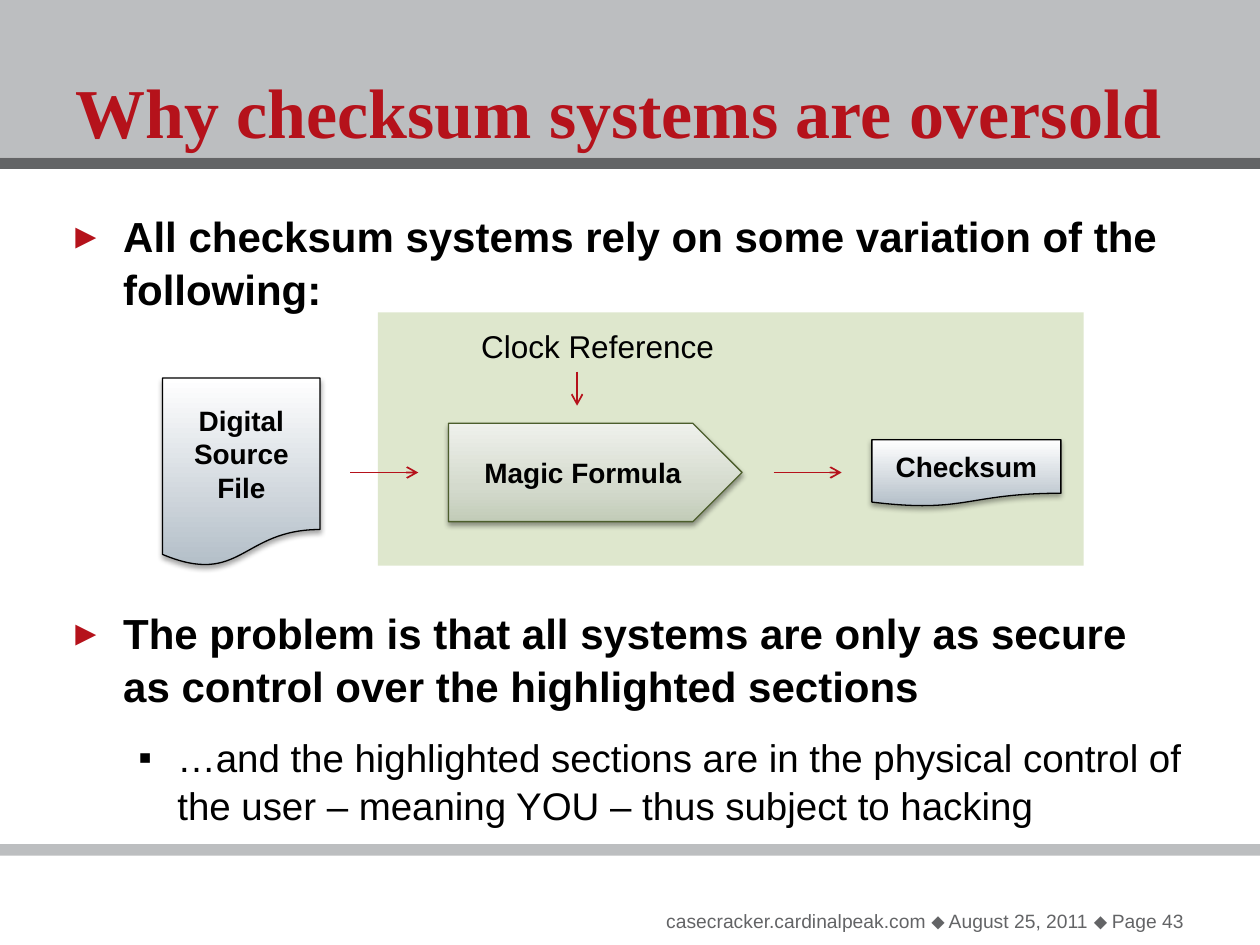
"""Build the slide on why checksum systems are oversold."""
from lxml import etree
from pptx import Presentation
from pptx.dml.color import RGBColor
from pptx.enum.shapes import MSO_CONNECTOR, MSO_SHAPE
from pptx.enum.text import MSO_ANCHOR, PP_ALIGN
from pptx.oxml import parse_xml
from pptx.oxml.ns import nsdecls, qn
from pptx.util import Inches, Pt

RECT = MSO_SHAPE.RECTANGLE
DOCUMENT = MSO_SHAPE.FLOWCHART_DOCUMENT
PENTAGON = MSO_SHAPE.PENTAGON
STRAIGHT = MSO_CONNECTOR.STRAIGHT
MIDDLE, TOP = MSO_ANCHOR.MIDDLE, MSO_ANCHOR.TOP
LEFT, CENTER, RIGHT = PP_ALIGN.LEFT, PP_ALIGN.CENTER, PP_ALIGN.RIGHT

RED = RGBColor(0xB5, 0x12, 0x1B)
BLACK = RGBColor(0, 0, 0)
SILVER = RGBColor(0xBC, 0xBE, 0xC0)
GRAY = RGBColor(0x63, 0x64, 0x66)
HIGHLIGHT = RGBColor(0xDE, 0xE7, 0xCD)
OLIVE = RGBColor(0x4C, 0x5E, 0x2C)
WHITE = RGBColor(0xFF, 0xFF, 0xFF)
STEEL = RGBColor(0xB3, 0xBE, 0xC8)
SAGE = [RGBColor(0xC2, 0xCC, 0xB8), RGBColor(0xD4, 0xDA, 0xCD), RGBColor(0xEF, 0xF1, 0xEC)]

WIDTH, HEIGHT = Inches(10), Inches(7.5)
COLS, ROWS = 100, 75
AXIS = 37.5
STEEL_STOPS = [(0, STEEL), (100, WHITE)]
SAGE_STOPS = list(zip((0, 35, 100), SAGE))


def x(col):
    return round(WIDTH * col / COLS)


def y(row):
    return round(HEIGHT * row / ROWS)


def cell(col, row, cols, rows):
    return x(col), y(row), x(cols), y(rows)


def style_paragraph(p, size, color=BLACK, bold=False, font="Arial", align=LEFT):
    p.alignment = align
    for r in p.runs:
        r.font.name = font
        r.font.size = Pt(size)
        r.font.bold = bold
        r.font.color.rgb = color


def add_panel(s, place, color):
    sp = s.shapes.add_shape(RECT, *place)
    sp.shadow.inherit = False
    sp.fill.solid()
    sp.fill.fore_color.rgb = color
    sp.line.fill.background()


def add_text(s, place, text, anchor=TOP, wrap=True, **style):
    tf = s.shapes.add_textbox(*place).text_frame
    tf.word_wrap = wrap
    tf.vertical_anchor = anchor
    tf.text = text
    style_paragraph(tf.paragraphs[0], **style)


def add_bullet(p, mark, color, margin, hang):
    pPr = p._p.get_or_add_pPr()
    pPr.set("marL", str(Inches(margin)))
    pPr.set("indent", str(-Inches(hang)))
    clr = etree.SubElement(pPr, qn("a:buClr"))
    etree.SubElement(clr, qn("a:srgbClr"), val=str(color))
    etree.SubElement(pPr, qn("a:buFont"), typeface="Arial")
    etree.SubElement(pPr, qn("a:buChar"), char=mark)


def add_points(s, place, points):
    tf = s.shapes.add_textbox(*place).text_frame
    tf.word_wrap = True
    for i, (level, text) in enumerate(points):
        p = tf.paragraphs[0] if i == 0 else tf.add_paragraph()
        p.text = text
        p.level = level
        if level == 0:
            add_bullet(p, "▸", RED, 0.38, 0.38)
            style_paragraph(p, 24, bold=True)
        else:
            add_bullet(p, "▪", BLACK, 0.81, 0.31)
            style_paragraph(p, 22)
        p.line_spacing = 1.05
        if i:
            p.space_before = Pt(12)


def add_step(s, kind, place, text, stops, outline, alpha, distance):
    sp = s.shapes.add_shape(kind, *place)
    sp.line.color.rgb = outline
    sp.line.width = Pt(0.75)
    marks = "".join(
        f'<a:gs pos="{pos * 1000}"><a:srgbClr val="{color}"/></a:gs>' for pos, color in stops)
    spPr = sp._element.spPr
    spPr.find(qn("a:prstGeom")).addnext(parse_xml(
        f'<a:gradFill {nsdecls("a")} rotWithShape="1"><a:gsLst>{marks}</a:gsLst>'
        '<a:lin ang="16200000" scaled="0"/></a:gradFill>'))
    spPr.append(parse_xml(
        f'<a:effectLst {nsdecls("a")}><a:outerShdw blurRad="{Pt(3.1)}" dist="{Pt(distance)}" '
        'dir="5400000" rotWithShape="0"><a:srgbClr val="000000">'
        f'<a:alpha val="{alpha * 1000}"/></a:srgbClr></a:outerShdw></a:effectLst>'))
    tf = sp.text_frame
    tf.word_wrap = True
    tf.vertical_anchor = MIDDLE
    tf.text = text
    style_paragraph(tf.paragraphs[0], 16, bold=True, align=CENTER)


def add_arrow(s, start, end):
    (col1, row1), (col2, row2) = start, end
    line = s.shapes.add_connector(STRAIGHT, x(col1), y(row1), x(col2), y(row2))
    line.line.color.rgb = RED
    line.line.width = Pt(1)
    etree.SubElement(line.line._get_or_add_ln(), qn("a:tailEnd"), type="arrow")
    etree.SubElement(line._element.spPr, qn("a:effectLst"))


def add_frame(s):
    add_panel(s, cell(0, 0, COLS, 12.5), SILVER)
    for row, color in ((12.5, GRAY), (67, SILVER)):
        add_panel(s, cell(0, row, COLS, 0.9), color)
    add_text(s, cell(5, 5, 90, 7.5), "Why checksum systems are oversold", anchor=MIDDLE,
             size=40, color=RED, bold=True, font="Times New Roman")
    add_text(s, cell(47.5, 71.7, 47.5, 2.9),
             "casecracker.cardinalpeak.com ⬥ August 25, 2011 ⬥ Page 43",
             size=11, color=GRAY, align=RIGHT)


def add_diagram(s):
    add_panel(s, cell(30, 24.8, 56, 20.1), HIGHLIGHT)
    add_step(s, DOCUMENT, cell(12.9, AXIS - 7.5, 12.5, 15), "Digital Source File",
             STEEL_STOPS, BLACK, 35, 1.8)
    add_step(s, PENTAGON, cell(35.6, AXIS - 3.9, 23.3, 7.8), "Magic Formula",
             SAGE_STOPS, OLIVE, 38, 1.6)
    add_step(s, DOCUMENT, cell(69.2, AXIS - 2.6, 15, 5.3), "Checksum",
             STEEL_STOPS, BLACK, 35, 1.8)
    add_text(s, cell(37.2, 25.5, 20.7, 4), "Clock Reference", wrap=False, size=18)
    for col in (27.8, 61.4):
        add_arrow(s, (col, AXIS), (col + 5.4, AXIS))
    add_arrow(s, (45.8, 29.5), (45.8, 32.2))


def main():
    prs = Presentation()
    prs.slide_width, prs.slide_height = WIDTH, HEIGHT
    s = prs.slides.add_slide(prs.slide_layouts[6])
    add_frame(s)
    add_diagram(s)
    add_points(s, cell(5, 16, 90, 10.7), [
        (0, "All checksum systems rely on some variation of the following:")])
    add_points(s, cell(5, 47.5, 90, 17.4), [
        (0, "The problem is that all systems are only as secure as control over "
            "the highlighted sections"),
        (1, "…and the highlighted sections are in the physical control of the user "
            "– meaning YOU – thus subject to hacking")])
    prs.save("out.pptx")


if __name__ == "__main__":
    main()
